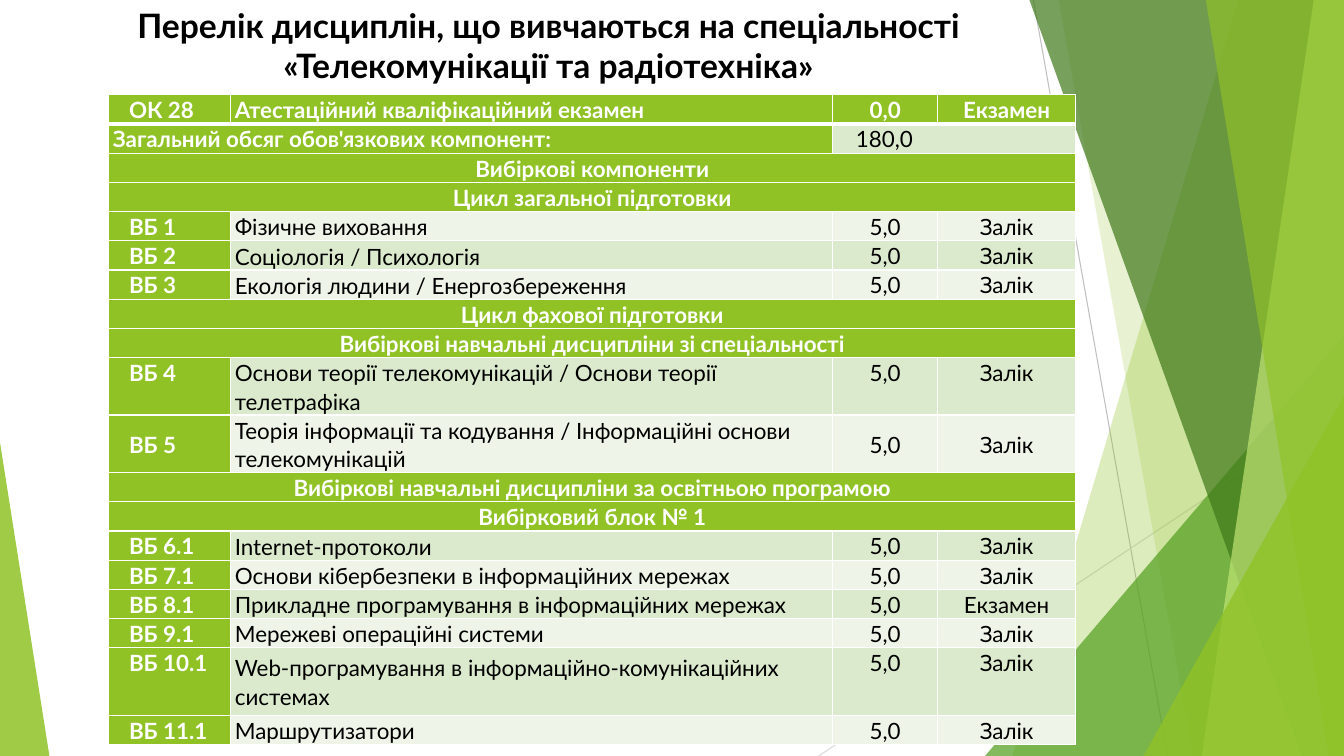
from lxml.etree import SubElement
from pptx import Presentation
from pptx.dml.color import RGBColor
from pptx.enum.shapes import MSO_CONNECTOR, MSO_SHAPE
from pptx.enum.text import MSO_ANCHOR, PP_ALIGN
from pptx.oxml.ns import qn
from pptx.util import Inches, Pt

TITLE = "Перелік дисциплін, що вивчаються на спеціальності «Телекомунікації та радіотехніка»"
ROWS = [
    ("ОК 28", "Атестаційний кваліфікаційний екзамен", "0,0", "Екзамен"),
    ("Загальний обсяг обов'язкових компонент:", "180,0"),
    ("Вибіркові компоненти",),
    ("Цикл загальної підготовки",),
    ("ВБ 1", "Фізичне виховання", "5,0", "Залік"),
    ("ВБ 2", "Соціологія / Психологія", "5,0", "Залік"),
    ("ВБ 3", "Екологія людини / Енергозбереження", "5,0", "Залік"),
    ("Цикл фахової підготовки",),
    ("Вибіркові навчальні дисципліни зі спеціальності",),
    ("ВБ 4", "Основи теорії телекомунікацій / Основи теорії телетрафіка", "5,0", "Залік"),
    ("ВБ 5", "Теорія інформації та кодування / Інформаційні основи телекомунікацій", "5,0", "Залік"),
    ("Вибіркові навчальні дисципліни за освітньою програмою",),
    ("Вибірковий блок № 1",),
    ("ВБ 6.1", "Internet-протоколи", "5,0", "Залік"),
    ("ВБ 7.1", "Основи кібербезпеки в інформаційних мережах", "5,0", "Залік"),
    ("ВБ 8.1", "Прикладне програмування в інформаційних мережах", "5,0", "Екзамен"),
    ("ВБ 9.1", "Мережеві операційні системи", "5,0", "Залік"),
    ("ВБ 10.1", "Web-програмування в інформаційно-комунікаційних системах", "5,0", "Залік"),
    ("ВБ 11.1", "Маршрутизатори", "5,0", "Залік"),
]
COLUMNS = (1.21, 5.97, 1.04, 1.37)
ROW_HEIGHT = 0.29
TALL_ROWS = {"ВБ 4": 0.57, "ВБ 5": 0.57, "ВБ 10.1": 0.67}
MIDDLE_ROW = "ВБ 5"
STARTS = {1: (0,), 2: (0, 2), 4: (0, 1, 2, 3)}
COLORS = {
    "green": "90C226", "leaf": "54A021", "forest": "3F7819", "lime": "C0E474",
    "odd": "DBE9CD", "even": "EEF4E8", "white": "FFFFFF", "black": "000000",
    "gray": "BFBFBF", "silver": "D9D9D9",
}
W, H = 13.33, 7.5
RAYS = [("gray", (10.25, 0), (11.58, H)), ("silver", (W, 4.03), (8.12, H))]
FACETS = [
    ("band", "green", 30, 12.28, 10.04),
    ("band", "green", 20, 10.5, 11.83),
    ("corner", "leaf", 72, (9.77, 3.33, 3.56, 4.17), 1),
    ("band", "forest", 70, 10.21, 12.91),
    ("band", "lime", 70, 13.03, 11.92),
    ("band", "green", 65, 11.96, 13.18),
    ("corner", "green", 80, (11.34, 3.93, 1.99, 3.57), 1),
    ("corner", "green", 85, (0, 4.39, 0.49, 3.11), 0),
]


def rgb(name):
    return RGBColor.from_string(COLORS[name])


def add_ray(s, color, start, end):
    line = s.shapes.add_connector(MSO_CONNECTOR.STRAIGHT, *map(Inches, start + end))
    line.line.color.rgb = rgb(color)
    line.line.width = Pt(0.75)
    SubElement(line._element.spPr, qn("a:effectLst"))


def add_facet(s, kind, color, opacity, place, edge):
    if kind == "band":
        builder = s.shapes.build_freeform(Inches(place), 0)
        builder.add_line_segments([(Inches(x), Inches(y)) for x, y in ((W, 0), (W, H), (edge, H))])
        facet = builder.convert_to_shape()
    else:
        facet = s.shapes.add_shape(MSO_SHAPE.ISOSCELES_TRIANGLE, *map(Inches, place))
        facet.adjustments[0] = edge
    facet.shadow.inherit = False
    facet.line.fill.background()
    facet.fill.solid()
    facet.fill.fore_color.rgb = rgb(color)
    tint = facet._element.spPr.find(f"{qn('a:solidFill')}/{qn('a:srgbClr')}")
    SubElement(tint, qn("a:alpha"), val=str(opacity * 1000))


def write(tf, text, size, color, bold, align):
    p = tf.paragraphs[0]
    p.alignment = align
    r = p.add_run()
    r.text = text
    for key, value in {"name": "Lato", "size": Pt(size), "bold": bold}.items():
        setattr(r.font, key, value)
    r.font.color.rgb = rgb(color)
    return p


def style_cell(cell, color, widths):
    margins = {"margin_left": 0.04, "margin_right": 0.04, "margin_top": 0, "margin_bottom": 0}
    for key, value in margins.items():
        setattr(cell, key, Inches(value))
    for side, width in zip("LRTB", widths):
        border = SubElement(cell._tc.get_or_add_tcPr(), qn(f"a:ln{side}"), w=str(Pt(width)))
        SubElement(SubElement(border, qn("a:solidFill")), qn("a:srgbClr"), val=COLORS["white"])
    cell.fill.solid()
    cell.fill.fore_color.rgb = rgb(color)


def fill_row(table, i, row):
    starts = STARTS[len(row)]
    widths = (1, 1, 3 if i == 1 else 1, 3 if i == 0 else 1)
    band = "odd" if i % 2 else "even"
    for col in range(len(COLUMNS)):
        plain = i > 0 and col >= starts[1] if len(row) > 1 else False
        style_cell(table.cell(i, col), band if plain else "green", widths)
    for k, (start, end) in enumerate(zip(starts, starts[1:] + (len(COLUMNS),))):
        cell = table.cell(i, start)
        if end - start > 1:
            cell.merge(table.cell(i, end - 1))
        plain = i > 0 and k > 0
        centred = len(row) == 1 or (len(row) == 4 and k > 1)
        p = write(cell.text_frame, row[k], 16, "black" if plain else "white", not plain,
                  PP_ALIGN.CENTER if centred else PP_ALIGN.LEFT)
        p.line_spacing = 1.07
        p.space_after = Pt(8)
        indent = {(4, 0): 0.16, (2, 1): 0.19}.get((len(row), k), 0)
        p._p.get_or_add_pPr().set("marL", str(Inches(indent)))
        middle = len(row) == 1 or (len(row) == 4 and k == 1) or row[0] == MIDDLE_ROW
        cell.vertical_anchor = MSO_ANCHOR.MIDDLE if middle else MSO_ANCHOR.TOP


def main():
    prs = Presentation()
    prs.slide_width, prs.slide_height = Inches(W), Inches(H)
    s = prs.slides.add_slide(prs.slide_layouts[5])
    for ray in RAYS:
        add_ray(s, *ray)
    for facet in FACETS:
        add_facet(s, *facet)

    title = s.shapes.title
    for key, value in {"left": 0.74, "top": 0, "width": 9.4, "height": 1.02}.items():
        setattr(title, key, Inches(value))
    title.text_frame.vertical_anchor = MSO_ANCHOR.TOP
    write(title.text_frame, TITLE, 24, "black", True, PP_ALIGN.CENTER)

    heights = [TALL_ROWS.get(row[0], ROW_HEIGHT) for row in ROWS]
    box = (1.08, 0.94, sum(COLUMNS), sum(heights))
    table = s.shapes.add_table(len(ROWS), len(COLUMNS), *map(Inches, box)).table
    table.first_row = table.horz_banding = False
    for column, width in zip(table.columns, COLUMNS):
        column.width = Inches(width)
    for i, (row, height) in enumerate(zip(ROWS, heights)):
        table.rows[i].height = Inches(height)
        fill_row(table, i, row)
    prs.save("out.pptx")


if __name__ == "__main__":
    main()
